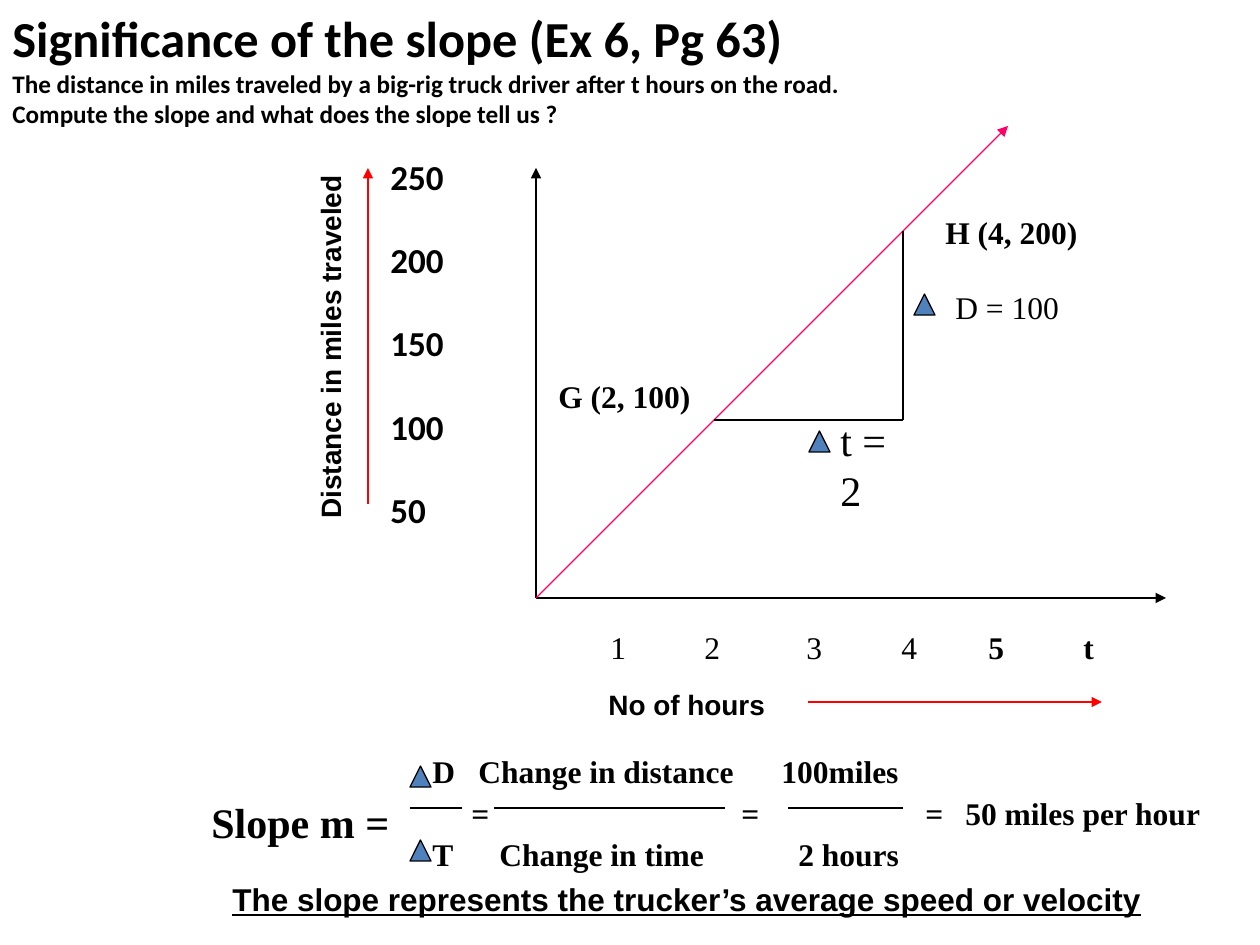
from dataclasses import dataclass
from lxml import etree
from pptx import Presentation, util as u
from pptx.dml.color import RGBColor
from pptx.enum import shapes, text
from pptx.oxml.ns import qn


@dataclass(frozen=True)
class Theme:
    ink: str = "000000"
    slope: str = "FF0066"
    guide: str = "FF0000"
    delta: str = "4F81BD"
    heading: str = "Calibri"
    serif: str = "Times New Roman"
    sans: str = "Arial"
    title: float = 28.8
    subtitle: float = 14.4
    large: int = 24
    tick: int = 20
    body: int = 18
    caption: int = 16
    line: float = 0.75


T = Theme()


def px(n):
    return u.Emu(round(n * 914400 / 126))


def rgb(value):
    return RGBColor.from_string(value)


def style(p, size, face, bold=True):
    f = p.font
    f.size, f.name, f.bold = u.Pt(size), face, bold
    f.color.rgb = rgb(T.ink)


def set_tabs(p, stops):
    tab_list = etree.Element(qn("a:tabLst"))
    for stop in stops:
        etree.SubElement(tab_list, qn("a:tab"), pos=str(px(stop)), algn="l")
    p._p.get_or_add_pPr().insert(0, tab_list)


def add_text(s, x, y, w, h, lines, size, face, bold=True, wrap=True):
    sp = s.shapes.add_textbox(px(x), px(y), px(w), px(h))
    tf = sp.text_frame
    tf.word_wrap = wrap
    for i, line in enumerate(lines):
        p = tf.add_paragraph() if i else tf.paragraphs[0]
        p.text = line
        style(p, size, face, bold)
    return sp


def add_line(s, x1, y1, x2, y2, color=T.ink, arrow=False):
    c = s.shapes.add_connector(shapes.MSO_CONNECTOR.STRAIGHT, px(x1), px(y1), px(x2), px(y2))
    c.line.color.rgb = rgb(color)
    c.line.width = u.Pt(T.line)
    if arrow:
        etree.SubElement(c.line._get_or_add_ln(), qn("a:tailEnd"), type="triangle")
    etree.SubElement(c._element.spPr, qn("a:effectLst"))


def add_delta(s, x, y):
    sp = s.shapes.add_shape(shapes.MSO_SHAPE.ISOSCELES_TRIANGLE, px(x), px(y), px(21), px(21))
    sp.shadow.inherit = False
    sp.fill.solid()
    sp.fill.fore_color.rgb = rgb(T.delta)
    sp.line.color.rgb = rgb(T.ink)
    sp.line.width = u.Pt(T.line)


def add_heading(s, x, y, w, h):
    sp = add_text(s, x, y, w, h, [
        "Significance of the slope (Ex 6, Pg 63)",
        "The distance in miles traveled by a big-rig truck driver after t hours on the road.",
        "Compute the slope and what does the slope tell us ?",
    ], T.subtitle, T.heading)
    tf = sp.text_frame
    tf.vertical_anchor = text.MSO_ANCHOR.MIDDLE
    tf.paragraphs[0].font.size = u.Pt(T.title)


def add_distance_scale(s, x, y):
    sp = add_text(s, x, y, 369, 47, ["Distance in miles traveled"], T.caption, T.sans)
    sp.rotation = 270
    add_line(s, x + 222, y + 181, x + 222, y - 155, T.guide, arrow=True)
    ticks = [str(n) for n in range(250, 0, -50)]
    sp = add_text(s, x + 232, y - 174, 126, 441, ticks, T.tick, T.heading)
    for p in sp.text_frame.paragraphs:
        p.space_after = u.Pt(23.6)


def add_hours_scale(s, x, y):
    sp = add_text(s, x, y, 514, 50, ["1\t2\t3\t4\t"], T.body, T.serif, bold=False)
    p = sp.text_frame.paragraphs[0]
    set_tabs(p, [94, 196, 291, 378, 473])
    r = p.add_run()
    r.text = "5\tt"
    r.font.bold = True
    add_text(s, x - 2, y + 59, 198, 47, ["No of hours"], T.caption, T.sans)
    add_line(s, x + 210, y + 80, x + 504, y + 80, T.guide, arrow=True)


def add_graph(s, x, y):
    g, h, end = 178, 367, 472
    add_line(s, x, y, x + 630, y, arrow=True)
    add_line(s, x, y, x, y - 430, arrow=True)
    add_line(s, x, y, x + end, y - end, T.slope, arrow=True)
    add_line(s, x + g, y - g, x + h, y - g)
    add_line(s, x + h, y - g, x + h, y - h)
    add_delta(s, x + 273, y - 167)
    add_text(s, x + 292, y - 190, 102, 62, ["t = 2"], T.large, T.serif, False, False)
    add_delta(s, x + 378, y - 304)
    add_text(s, x + 407, y - 316, 129, 50, ["D = 100"], T.body, T.serif, False, False)
    add_text(s, x + 397, y - 391, 158, 50, ["H (4, 200)"], T.body, T.serif, wrap=False)
    add_text(s, x + 10, y - 227, 158, 50, ["G (2, 100)"], T.body, T.serif, wrap=False)


def add_formula(s, x, y):
    add_text(s, x, y + 44, 214, 63, ["Slope m ="], T.large, T.serif, wrap=False)
    rows = [
        ("D\tChange in distance\t100miles", [46, 349]),
        ("\t=\t=\t=\t50 miles per hour", [39, 309, 493, 533]),
        ("T\tChange in time\t2 hours", [67, 366]),
    ]
    sp = add_text(s, x + 221, y, 805, 164, [line for line, _ in rows], T.body, T.serif)
    for p, (_, stops) in zip(sp.text_frame.paragraphs, rows):
        set_tabs(p, stops)
        p.space_before = u.Pt(2.2)
    for top in (20, 94):
        add_delta(s, x + 211, y + top)
    for left, right in ((211, 263), (295, 526), (589, 704)):
        add_line(s, x + left, y + 62, x + right, y + 62)


def add_conclusion(s, x, y):
    sp = add_text(s, x, y, 934, 50,
                  ["The slope represents the trucker’s average speed or velocity"], T.body, T.sans)
    sp.text_frame.paragraphs[0].font.underline = True


def main():
    prs = Presentation()
    prs.slide_width, prs.slide_height = px(1260), px(945)
    s = prs.slides.add_slide(prs.slide_layouts[6])
    add_heading(s, 0, 0, 1239, 136)
    add_distance_scale(s, 146, 323)
    add_graph(s, 536, 598)
    add_hours_scale(s, 598, 622)
    add_formula(s, 199, 746)
    add_conclusion(s, 220, 874)
    prs.save("out.pptx")


if __name__ == "__main__":
    main()
